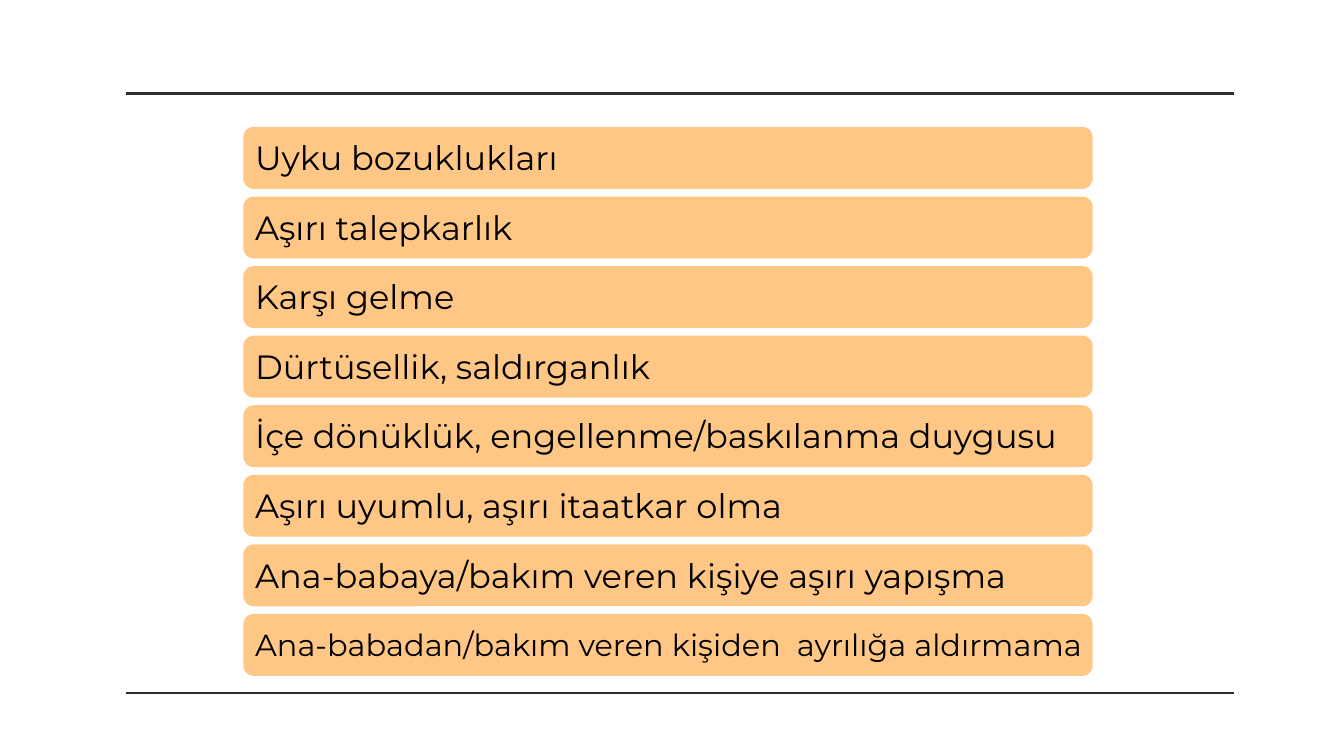
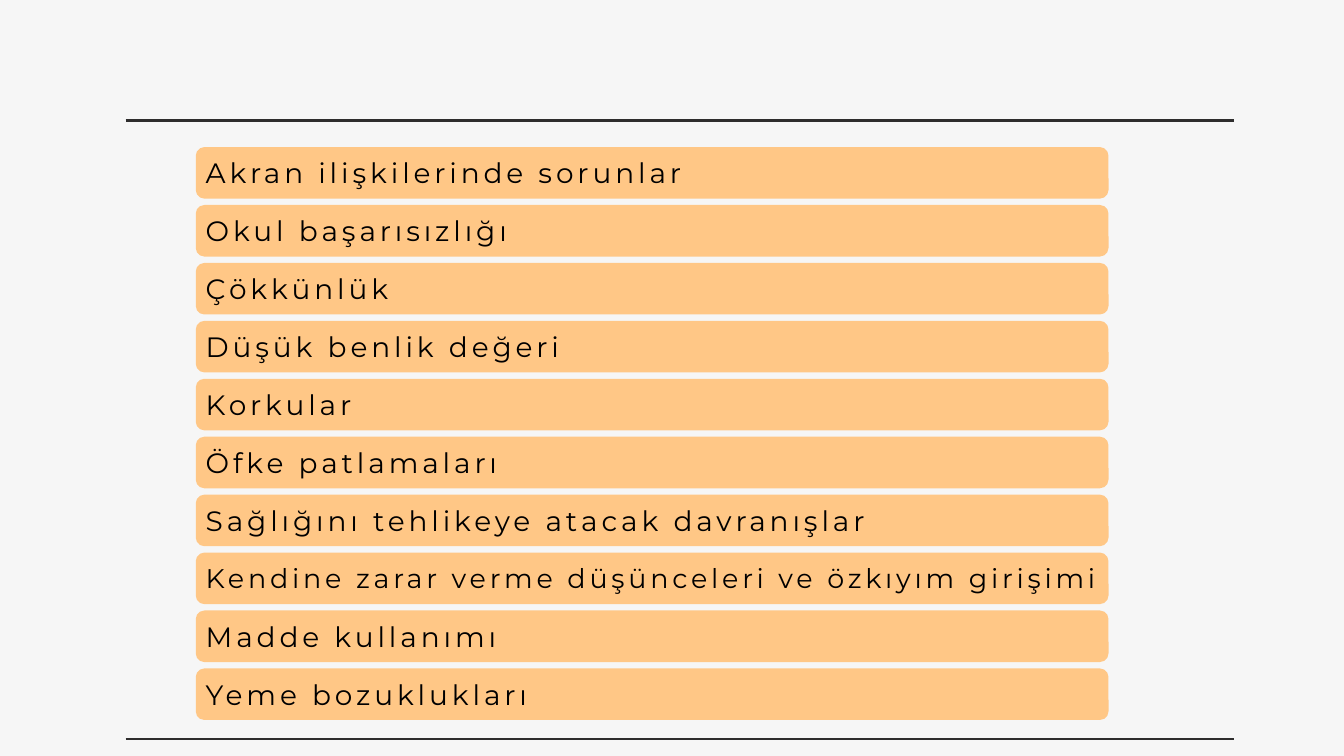
from lxml.etree import SubElement
from pptx import Presentation
from pptx.dml.color import RGBColor
from pptx.enum.shapes import MSO_CONNECTOR, MSO_SHAPE
from pptx.enum.text import MSO_ANCHOR, PP_ALIGN
from pptx.oxml.ns import qn
from pptx.util import Cm, Pt

WHITE = RGBColor(0xFF, 0xFF, 0xFF)
LIGHT_GREY = RGBColor(0xF6, 0xF6, 0xF6)
CHARCOAL = RGBColor(0x2E, 0x2D, 0x2D)
ORANGE = RGBColor(0xFF, 0xC7, 0x86)
BLACK = RGBColor(0x00, 0x00, 0x00)
FONT = "Montserrat"
RULE_LEFT, RULE_RIGHT = 4.75, 46.66

SYMPTOM_SLIDES = [
    {
        "background": WHITE,
        "rules": (3.54, 26.2),
        "left": 9.2, "top": 4.8, "width": 32.1, "height": 2.34, "pitch": 2.63,
        "inset": 0.33, "size": 36, "tracking": 0,
        "symptoms": [
            "Uyku bozuklukları",
            "Aşırı talepkarlık",
            "Karşı gelme",
            "Dürtüsellik, saldırganlık",
            "İçe dönüklük, engellenme/baskılanma duygusu",
            "Aşırı uyumlu, aşırı itaatkar olma",
            "Ana-babaya/bakım veren kişiye aşırı yapışma",
            "Ana-babadan/bakım veren kişiden  ayrılığa aldırmama",
        ],
        "smaller": {7: 32.6},
    },
    {
        "background": LIGHT_GREY,
        "rules": (4.57, 27.94),
        "left": 7.4, "top": 5.56, "width": 34.5, "height": 1.95, "pitch": 2.19,
        "inset": 0.28, "size": 30, "tracking": 0.14,
        "symptoms": [
            "Akran ilişkilerinde sorunlar",
            "Okul başarısızlığı",
            "Çökkünlük",
            "Düşük benlik değeri",
            "Korkular",
            "Öfke patlamaları",
            "Sağlığını tehlikeye atacak davranışlar",
            "Kendine zarar verme düşünceleri ve özkıyım girişimi",
            "Madde kullanımı",
            "Yeme bozuklukları",
        ],
        "smaller": {7: 28.9},
    },
]


def add_rule(slide, y):
    rule = slide.shapes.add_connector(
        MSO_CONNECTOR.STRAIGHT, Cm(RULE_LEFT), Cm(y), Cm(RULE_RIGHT), Cm(y))
    rule.line.color.rgb = CHARCOAL
    rule.line.width = Pt(3)
    SubElement(rule._element.spPr, qn("a:effectLst"))


def add_bar(slide, layout, row, symptom):
    size = layout["smaller"].get(row, layout["size"])
    bar = slide.shapes.add_shape(
        MSO_SHAPE.ROUNDED_RECTANGLE,
        Cm(layout["left"]), Cm(layout["top"] + row * layout["pitch"]),
        Cm(layout["width"]), Cm(layout["height"]))
    bar.shadow.inherit = False
    bar.fill.solid()
    bar.fill.fore_color.rgb = ORANGE
    bar.line.fill.background()

    text_frame = bar.text_frame
    text_frame.text = symptom
    text_frame.word_wrap = True
    text_frame.vertical_anchor = MSO_ANCHOR.MIDDLE
    text_frame.margin_left = Cm(layout["inset"])
    text_frame.margin_top = Cm(0.1)
    text_frame.margin_right = text_frame.margin_bottom = 0

    paragraph = text_frame.paragraphs[0]
    paragraph.alignment = PP_ALIGN.LEFT
    paragraph.line_spacing = Pt(size * 1.08)
    run = paragraph.runs[0]
    run.font.name = FONT
    run.font.size = Pt(size)
    run.font.color.rgb = BLACK
    if layout["tracking"]:
        run.font._element.set("spc", str(round(size * layout["tracking"] * 100)))


presentation = Presentation()
presentation.slide_width = Cm(50.8)
presentation.slide_height = Cm(28.58)

for layout in SYMPTOM_SLIDES:
    slide = presentation.slides.add_slide(presentation.slide_layouts[6])
    slide.background.fill.solid()
    slide.background.fill.fore_color.rgb = layout["background"]
    for y in layout["rules"]:
        add_rule(slide, y)
    for row, symptom in enumerate(layout["symptoms"]):
        add_bar(slide, layout, row, symptom)

presentation.save("out.pptx")
